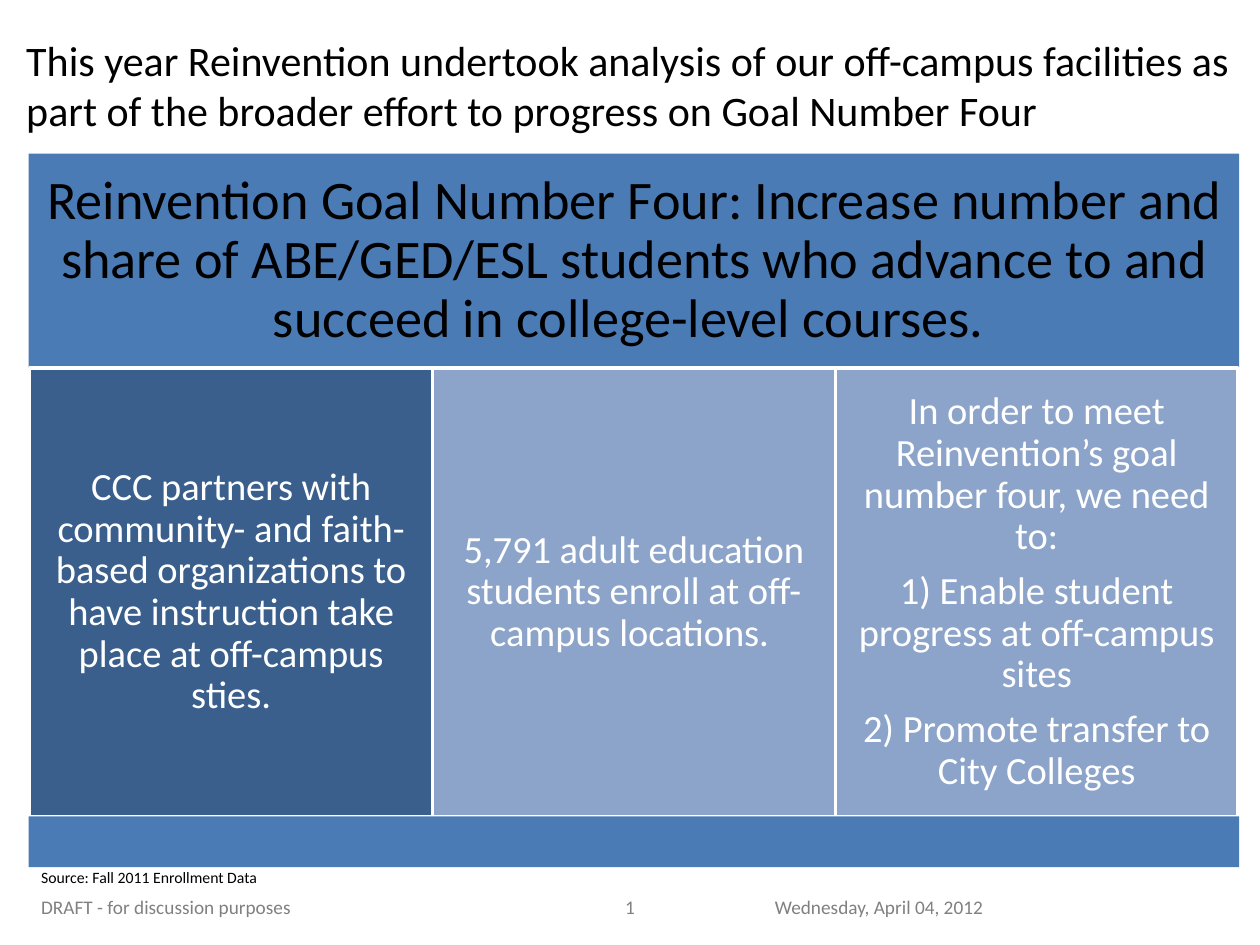
"""Build the slide on off-campus facilities and Reinvention Goal Number Four."""
from dataclasses import dataclass

from pptx import Presentation
from pptx.dml.color import RGBColor as RGB
from pptx.enum.shapes import MSO_SHAPE as SHAPE
from pptx.enum.text import MSO_ANCHOR as ANCHOR, PP_ALIGN as ALIGN
from pptx.util import Cm, Pt


@dataclass(frozen=True)
class Theme:
    font: str = "Calibri"
    black: RGB = RGB(0x00, 0x00, 0x00)
    white: RGB = RGB(0xFF, 0xFF, 0xFF)
    gray: RGB = RGB(0x80, 0x80, 0x80)
    band: RGB = RGB(0x4B, 0x7B, 0xB5)
    dark: RGB = RGB(0x3A, 0x5F, 0x8C)
    light: RGB = RGB(0x8C, 0xA4, 0xC9)
    title: int = 24
    goal: int = 31
    panel: int = 22
    footer: int = 11
    source: int = 9


T = Theme()
LEFT, WIDTH = 0.58, 24.4
PANELS = (
    (T.dark, ["CCC partners with community- and faith-based organizations to "
              "have instruction take place at off-campus sties."]),
    (T.light, ["5,791 adult education students enroll at off-campus locations. "]),
    (T.light, ["In order to meet Reinvention’s goal number four, we need to:",
               "1) Enable student progress at off-campus sites",
               "2) Promote transfer to City Colleges"]),
)
FOOTERS = (
    (14.15, 5.92, "Wednesday, April 04, 2012", ALIGN.RIGHT),
    (0.58, 8.05, "DRAFT - for discussion purposes", ALIGN.LEFT),
    (11.43, 2.54, "1", ALIGN.CENTER),
)


def set_margins(tf, x, y):
    tf.margin_left = tf.margin_right = Cm(x)
    tf.margin_top = tf.margin_bottom = Cm(y)


def style(p, size, color, align):
    p.alignment = align
    for r in p.runs:
        r.font.name = T.font
        r.font.size = Pt(size)
        r.font.color.rgb = color


def add_text(s, box, text, size, color, align=ALIGN.LEFT,
             anchor=ANCHOR.MIDDLE, margins=(0.25, 0.13)):
    tf = s.shapes.add_textbox(*map(Cm, box)).text_frame
    tf.word_wrap = True
    tf.vertical_anchor = anchor
    set_margins(tf, *margins)
    tf.text = text
    style(tf.paragraphs[0], size, color, align)


def add_block(s, box, fill, lines=(), size=T.panel, color=T.white,
              margin=0.23, outline=False):
    sp = s.shapes.add_shape(SHAPE.RECTANGLE, *map(Cm, box))
    sp.shadow.inherit = False
    sp.fill.solid()
    sp.fill.fore_color.rgb = fill
    if outline:
        sp.line.color.rgb = T.white
        sp.line.width = Pt(2)
    else:
        sp.line.fill.background()
    tf = sp.text_frame
    tf.word_wrap = True
    tf.vertical_anchor = ANCHOR.MIDDLE
    set_margins(tf, margin, margin)
    for i, line in enumerate(lines):
        p = tf.add_paragraph() if i else tf.paragraphs[0]
        p.text = line
        p.line_spacing = 0.9
        p.space_after = Pt(0.35 * size)
        style(p, size, color, ALIGN.CENTER)


def add_goal_panels(s):
    add_block(s, (LEFT, 3.1, WIDTH, 4.32), T.band,
              ["Reinvention Goal Number Four: Increase number and share of "
               "ABE/GED/ESL students who advance to and succeed in "
               "college-level courses. "], T.goal, T.black, 0.33)
    width = 8.12
    left = LEFT + (WIDTH - width * len(PANELS)) / 2
    for i, (fill, lines) in enumerate(PANELS):
        add_block(s, (left + i * width, 7.42, width, 9.04), fill, lines,
                  outline=True)
    add_block(s, (LEFT, 16.46, WIDTH, 1.02), T.band)


def main():
    prs = Presentation()
    prs.slide_width, prs.slide_height = Cm(25.4), Cm(19.05)
    s = prs.slides.add_slide(prs.slide_layouts[6])
    add_text(s, (0.53, 0.69, 24.28, 2.06),
             "This year Reinvention undertook analysis of our off-campus "
             "facilities as part of the broader effort to progress on Goal "
             "Number Four", T.title, T.black, anchor=ANCHOR.TOP, margins=(0, 0))
    for left, width, text, align in FOOTERS:
        add_text(s, (left, 18.03, width, 0.51), text, T.footer, T.gray, align)
    add_goal_panels(s)
    add_text(s, (LEFT, 17.37, 24.13, 0.64), "Source: Fall 2011 Enrollment Data",
             T.source, T.black, anchor=ANCHOR.BOTTOM)
    prs.save("out.pptx")


if __name__ == "__main__":
    main()
